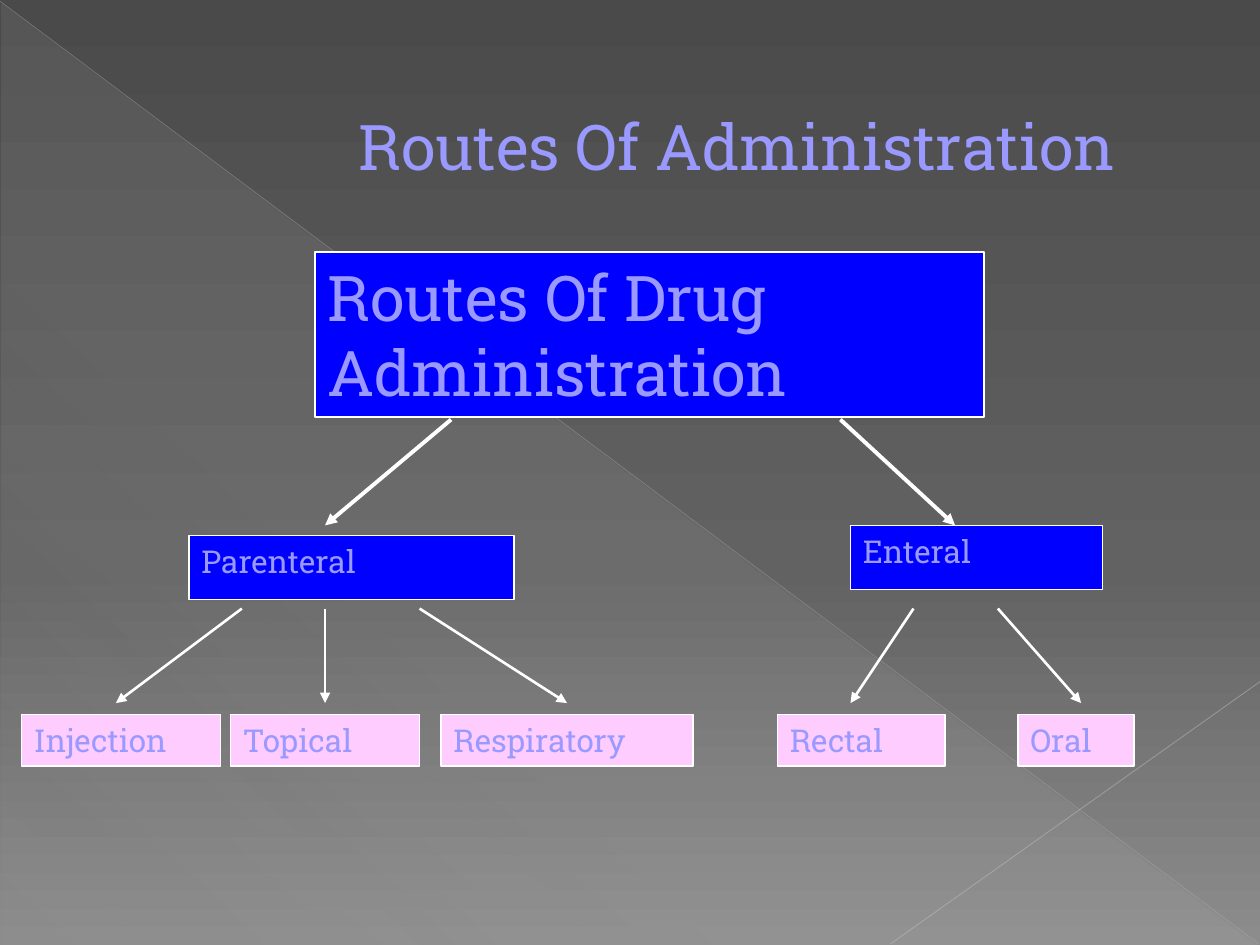
from lxml.etree import SubElement
from pptx import Presentation
from pptx.dml.color import RGBColor
from pptx.enum.shapes import MSO_CONNECTOR, MSO_SHAPE
from pptx.enum.text import MSO_ANCHOR, MSO_AUTO_SIZE, PP_ALIGN
from pptx.oxml.ns import qn
from pptx.util import Inches, Pt

FONT = "Roboto Slab"
LILAC = RGBColor(0x99, 0x99, 0xFF)
BLUE = RGBColor(0x00, 0x00, 0xFF)
PINK = RGBColor(0xFF, 0xCC, 0xFF)
WHITE = RGBColor(0xFF, 0xFF, 0xFF)
GREY = RGBColor(0xBF, 0xBF, 0xBF)
LIGHT_GREY = RGBColor(0xC6, 0xC6, 0xC6)
CHARCOAL = RGBColor(0x4A, 0x4A, 0x4A)
MID_GREY = RGBColor(0x62, 0x62, 0x62)
ASH = RGBColor(0x8C, 0x8C, 0x8C)
PALE = RGBColor(0xD2, 0xD2, 0xD2)


def set_gradient(fill, owner, stops, angle):
    """Give the fill inside owner its stops: (position %, colour, opacity %)."""
    fill.gradient()
    gradient = owner.find(".//" + qn("a:gradFill"))
    stop_list = gradient.find(qn("a:gsLst"))
    for old_stop in list(stop_list):
        stop_list.remove(old_stop)
    for position, colour, opacity in stops:
        stop = SubElement(stop_list, qn("a:gs"), pos=str(position * 1000))
        stop_colour = SubElement(stop, qn("a:srgbClr"), val=str(colour))
        SubElement(stop_colour, qn("a:alpha"), val=str(opacity * 1000))
    direction = gradient.find(qn("a:lin"))
    direction.set("ang", str(angle * 60000))
    direction.set("scaled", "0")


def add_line(start, end, colour, width):
    """Draw a straight line and return its outline element."""
    line = slide.shapes.add_connector(
        MSO_CONNECTOR.STRAIGHT, *(Inches(value) for value in start + end))
    line.line.color.rgb = colour
    line.line.width = Pt(width)
    SubElement(line.element.spPr, qn("a:effectLst"))
    return line.element.spPr.find(qn("a:ln"))


prs = Presentation()
prs.slide_width, prs.slide_height = Inches(10), Inches(7.5)
slide = prs.slides.add_slide(prs.slide_layouts[5])

# Background with a pale triangle and two thin diagonals
set_gradient(slide.background.fill, slide.element,
             [(0, CHARCOAL, 100), (60, MID_GREY, 100), (100, ASH, 100)], 90)
triangle = slide.shapes.add_shape(
    MSO_SHAPE.RIGHT_TRIANGLE, Inches(0.01), Inches(0.02), Inches(9.98), Inches(7.48))
triangle.shadow.inherit = False
triangle.line.fill.background()
set_gradient(triangle.fill, triangle.element,
             [(0, PALE, 10), (70, PALE, 8), (100, PALE, 1)], 133)
for start, end, colour, width, opacity in [
    ((0, 0.01), (9.99, 7.49), GREY, 0.39, 35),
    ((10, 5.41), (7.07, 7.49), LIGHT_GREY, 0.47, 45),
]:
    outline = add_line(start, end, colour, width)
    SubElement(outline.find(".//" + qn("a:srgbClr")), qn("a:alpha"),
               val=str(opacity * 1000))

# Title, brought in front of the background parts
title = slide.shapes.title
slide.shapes.element.append(title.element)
title.left, title.top = Inches(1.42), Inches(0.25)
title.width, title.height = Inches(8.33), Inches(1.25)
title.text_frame.text = "Routes Of Administration"
title.text_frame.vertical_anchor = MSO_ANCHOR.BOTTOM
heading = title.text_frame.paragraphs[0]
heading.alignment = PP_ALIGN.CENTER
heading.font.name, heading.font.size = FONT, Pt(36)
heading.font.color.rgb = LILAC
title.element.find(".//" + qn("a:pPr")).set("marL", str(Inches(0.53)))

# Boxes of the tree: text, left, top, width, height, fill, text size
for text, left, top, width, height, fill, size in [
    ("Routes Of Drug Administration", 2.5, 2, 5.31, 1.31, BLUE, 36),
    ("Parenteral", 1.5, 4.25, 2.58, 0.51, BLUE, 18),
    ("Enteral", 6.75, 4.17, 2, 0.51, BLUE, 18),
    ("Injection", 0.17, 5.67, 1.58, 0.41, PINK, 18),
    ("Topical", 1.83, 5.67, 1.5, 0.41, PINK, 18),
    ("Respiratory", 3.5, 5.67, 2, 0.41, PINK, 18),
    ("Rectal", 6.17, 5.67, 1.33, 0.41, PINK, 18),
    ("Oral", 8.08, 5.67, 0.92, 0.41, PINK, 18),
]:
    box = slide.shapes.add_shape(
        MSO_SHAPE.RECTANGLE, Inches(left), Inches(top), Inches(width), Inches(height))
    box.shadow.inherit = False
    box.fill.solid()
    box.fill.fore_color.rgb = fill
    box.line.color.rgb = WHITE
    box.line.width = Pt(0.75)
    frame = box.text_frame
    frame.text = text
    frame.word_wrap = True
    frame.auto_size = MSO_AUTO_SIZE.SHAPE_TO_FIT_TEXT
    frame.vertical_anchor = MSO_ANCHOR.TOP
    label = frame.paragraphs[0]
    label.alignment = PP_ALIGN.LEFT
    label.font.name, label.font.size = FONT, Pt(size)
    label.font.color.rgb = LILAC

# Arrows between the levels: top, bottom, width, and (from x, to x) pairs
for top, bottom, width, spans in [
    (3.33, 4.17, 2.25, [(3.58, 2.58), (6.67, 7.58)]),
    (4.83, 5.58, 1.5, [(1.92, 0.92), (2.58, 2.58), (3.33, 4.5),
                       (7.25, 6.75), (7.92, 8.58)]),
]:
    for start_x, end_x in spans:
        outline = add_line((start_x, top), (end_x, bottom), WHITE, width)
        SubElement(outline, qn("a:tailEnd"), type="triangle")

prs.save("out.pptx")
